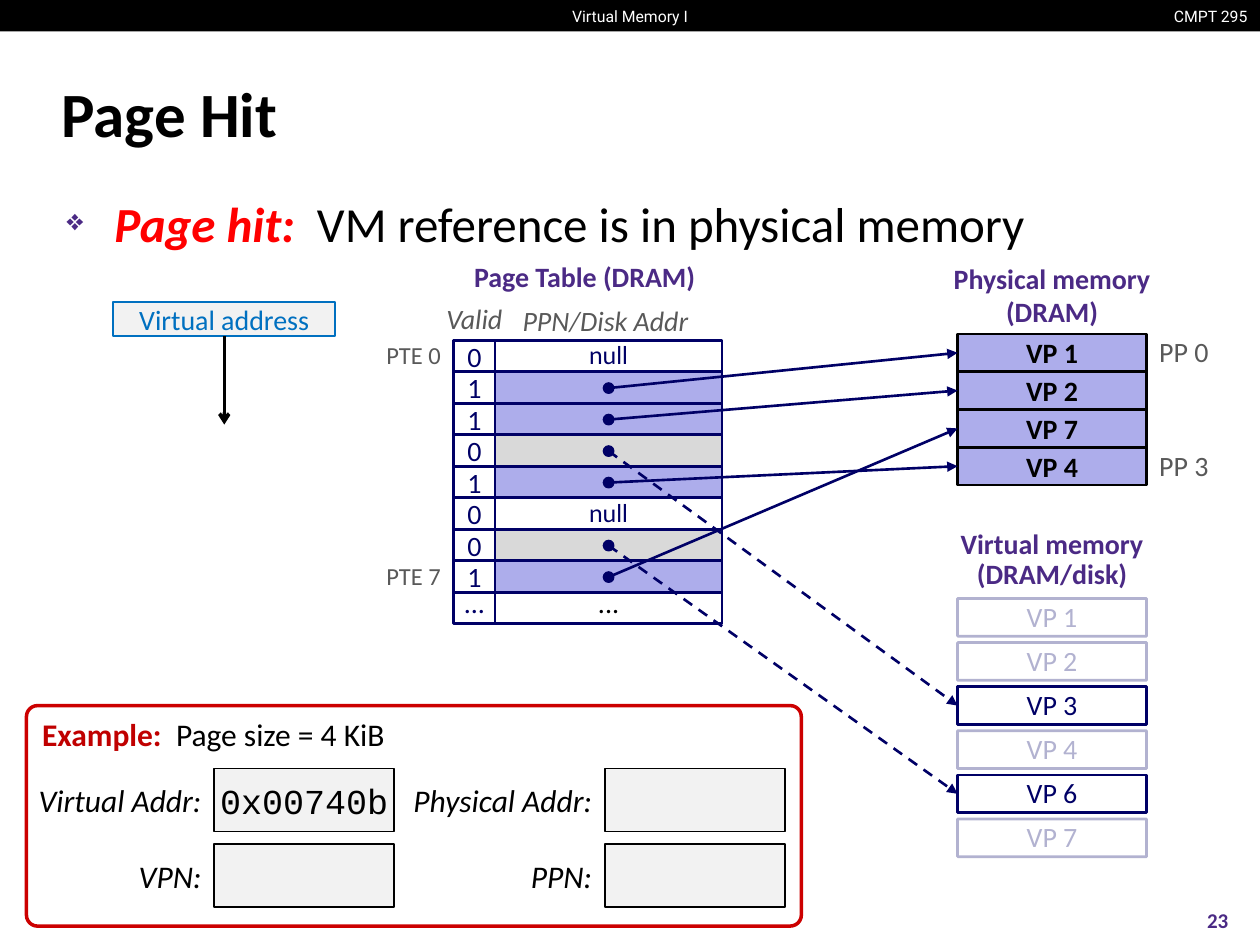
"""Build the Page Hit slide: page table, physical and virtual memory, and an address example."""
from lxml import etree
from pptx import Presentation, util as u
from pptx.dml.color import RGBColor
from pptx.enum import dml, shapes, text
from pptx.oxml import ns

HUES = dict(black="000000", white="FFFFFF", purple="4B2A85", red="FF0000", navy="000066",
            lilac="ADADEB", gray="D9D9D9", dim="595959", blue="0070C0", pale="F2F2F2",
            frame="CC0000", brick="C00000")
LEFT, MID, RIGHT = text.PP_ALIGN.LEFT, text.PP_ALIGN.CENTER, text.PP_ALIGN.RIGHT
RECT, OVAL = shapes.MSO_SHAPE.RECTANGLE, shapes.MSO_SHAPE.OVAL
ROUND = shapes.MSO_SHAPE.ROUNDED_RECTANGLE

ENTRIES = [("0", "null"), ("1", "VP 1"), ("1", "VP 2"), ("0", "VP 3"), ("1", "VP 4"),
           ("0", "null"), ("0", "VP 6"), ("1", "VP 7"), ("...", "...")]
PHYSICAL = ["VP 1", "VP 2", "VP 7", "VP 4"]
VIRTUAL = ["VP 1", "VP 2", "VP 3", "VP 4", "VP 6", "VP 7"]
FIELDS = [[("Virtual Addr:", "0x00740b"), ("Physical Addr:", "")],
          [("VPN:", ""), ("PPN:", "")]]
HEADS = [
    ((3.6, 2, 2.08, 0.4), "Page Table (DRAM)", 0.98),
    ((7.45, 2.1, 1.8, 0.5), "Physical memory\n(DRAM)", 0.98),
    ((7.6, 4.2, 1.5, 0.5), "Virtual memory\v(DRAM/disk)", 0.88),
]
NOTES = [
    ((3.46, 2.39, 0.61, 0.3), "Valid", 16, True, MID),
    ((3.93, 2.4, 1.75, 0.3), "PPN/Disk Addr", 16, True, MID),
    ((3, 2.7, 0.5, 0.25), "PTE 0", 14, False, RIGHT),
    ((3, 4.45, 0.5, 0.25), "PTE 7", 14, False, RIGHT),
    ((9.1, 2.65, 0.59, 0.3), "PP 0", 16, False, MID),
    ((9.1, 3.55, 0.59, 0.3), "PP 3", 16, False, MID),
]

deck = Presentation()
deck.slide_width, deck.slide_height = u.Inches(10), u.Inches(7.5)
slide = deck.slides.add_slide(deck.slide_layouts[6])


def hue(name):
    return RGBColor.from_string(HUES[name])


def style(font, size, color, face="Calibri", bold=False, italic=False):
    font.size, font.name, font.bold, font.italic = u.Pt(size), face, bold, italic
    font.color.rgb = hue(color)


def write(shape, words, size, color, align=MID, inset=(0, 0, 0, 0), gap=None, wrap=True,
          anchor=text.MSO_ANCHOR.MIDDLE, **looks):
    frame = shape.text_frame
    frame.word_wrap, frame.vertical_anchor = wrap, anchor
    (frame.margin_left, frame.margin_top,
     frame.margin_right, frame.margin_bottom) = map(u.Inches, inset)
    frame.text = words
    for par in frame.paragraphs:
        par.alignment = align
        if gap:
            par.line_spacing = gap
        style(par.font, size, color, **looks)


def label(at, words, size, color, **looks):
    item = slide.shapes.add_textbox(*map(u.Inches, at))
    write(item, words, size, color, **looks)
    return item


def phrase(shape, parts, size):
    par = shape.text_frame.paragraphs[0]
    for words, color, bold, italic in parts:
        run = par.add_run()
        run.text = words
        style(run.font, size, color, bold=bold, italic=italic)
    return par


def box(at, fill=None, line=None, width=1.5, kind=RECT):
    item = slide.shapes.add_shape(kind, *map(u.Inches, at))
    item.shadow.inherit = False
    if fill:
        item.fill.solid()
        item.fill.fore_color.rgb = hue(fill)
    else:
        item.fill.background()
    if line:
        item.line.color.rgb = hue(line)
        item.line.width = u.Pt(width)
    else:
        item.line.fill.background()
    return item


def fade(shape, share):
    for tint in list(shape.element.iter(ns.qn("a:srgbClr"))):
        etree.SubElement(tint, ns.qn("a:alpha"), val=str(share * 1000))


def arrow(start, end, color, width, head, dash=False):
    link = slide.shapes.add_connector(shapes.MSO_CONNECTOR.STRAIGHT,
                                      *map(u.Inches, (*start, *end)))
    link.line.color.rgb = hue(color)
    link.line.width = u.Pt(width)
    if dash:
        link.line.dash_style = dml.MSO_LINE.DASH
    etree.SubElement(link.line._get_or_add_ln(), ns.qn("a:tailEnd"), type=head)
    etree.SubElement(link.element.spPr, ns.qn("a:effectLst"))
    return link


def header():
    box((0, 0, 10, 0.25), "black")
    for at, words, align in [((4.42, 0, 1.16, 0.25), "Virtual Memory I", MID),
                             ((9.09, 0, 0.81, 0.25), "CMPT 295", RIGHT)]:
        label(at, words, 9, "white", align=align, face="Roboto", wrap=False)
    label((0.39, 0.48, 9.19, 0.83), "Page Hit", 36, "black", align=LEFT, bold=True,
          inset=(0.1, 0.05, 0.1, 0.05))
    body = label((0.43, 1.49, 9.15, 0.6), "", 28, "black", align=LEFT,
                 inset=(0.1, 0.05, 0.1, 0.05), anchor=text.MSO_ANCHOR.TOP)
    par = phrase(body, [("Page hit:", "red", True, True),
                        ("  VM reference is in physical memory", "black", False, False)], 28)
    props = par._p.get_or_add_pPr()
    props.set("marL", str(u.Inches(0.38)))
    props.set("indent", str(-u.Inches(0.38)))
    tint = etree.SubElement(props, ns.qn("a:buClr"))
    etree.SubElement(tint, ns.qn("a:srgbClr"), val=HUES["purple"])
    etree.SubElement(props, ns.qn("a:buSzPct"), val="60000")
    etree.SubElement(props, ns.qn("a:buChar"), char="❖")
    label((9.33, 7.1, 0.67, 0.4), "23", 12, "purple", bold=True)


def memory():
    frames, pages = {}, {}
    for i, name in enumerate(PHYSICAL):
        frames[name] = box((7.6, 2.65 + 0.3 * i, 1.5, 0.3), "lilac", "black")
        write(frames[name], name, 16, "black", bold=True)
    for i, name in enumerate(VIRTUAL):
        pages[name] = box((7.6, 4.75 + 0.35 * i, 1.5, 0.3), None, "navy")
        write(pages[name], name, 16, "navy", gap=0.98)
        if name in PHYSICAL:
            fade(pages[name], 30)
    return frames, pages


def table(frames, pages):
    links = []
    for i, (valid, page) in enumerate(ENTRIES):
        top = 2.7 + 0.25 * i
        mapped = page in VIRTUAL
        fill = ("lilac" if valid == "1" else "gray") if mapped else "white"
        cell = box((3.93, top, 1.8, 0.25), fill, "navy")
        flag = box((3.6, top, 0.33, 0.25), None, "navy")
        inset = (0, 0, 0, 0.09 if valid == "..." else 0)
        write(flag, valid, 16, "navy", inset=inset, wrap=False)
        if mapped:
            box((4.79, top + 0.09, 0.08, 0.08), "navy", "navy", 1, OVAL)
            links.append((top + 0.13, valid == "1", page))
        elif page == "null":
            write(cell, page, 14, "navy", face="Lato", gap=0.98, wrap=False)
        else:
            write(cell, page, 16, "black", inset=inset, wrap=False)
    for y, hit, page in links:
        goal = (frames if hit else pages)[page]
        arrow((4.83, y), (7.6, y), "navy", 1.5, "triangle", not hit).end_connect(goal, 1)


def example():
    panel = box((0.21, 5.6, 6.15, 1.75), "white", "frame", 2, ROUND)
    panel.adjustments[0] = 0.05
    write(panel, "", 18, "black", align=LEFT, inset=(0.1, 0.05, 0.1, 0.05),
          anchor=text.MSO_ANCHOR.TOP)
    phrase(panel, [("Example:  ", "brick", True, False),
                   ("Page size = 4 KiB", "black", False, False)], 18)
    for i, row in enumerate(FIELDS):
        for j, (name, value) in enumerate(row):
            left, top = 0.1 + 3.1 * j, 6.1 + 0.6 * i
            label((left, top, 1.5, 0.5), name, 18, "black", align=RIGHT, italic=True)
            field = box((left + 1.6, top, 1.43, 0.5), "pale", "black", 1)
            if value:
                write(field, value, 20, "black", face="Courier New")


def main():
    header()
    for at, words, gap in HEADS:
        label(at, words, 16, "purple", gap=gap, bold=True)
    for at, words, size, italic, align in NOTES:
        label(at, words, size, "dim", align=align, gap=0.98, italic=italic)
    address = box((0.9, 2.4, 1.76, 0.27), "pale", "blue", 1)
    write(address, "Virtual address", 16, "blue")
    arrow((1.78, 2.67), (1.78, 3.37), "black", 2, "arrow").begin_connect(address, 2)
    example()
    table(*memory())
    deck.save("out.pptx")


if __name__ == "__main__":
    main()
